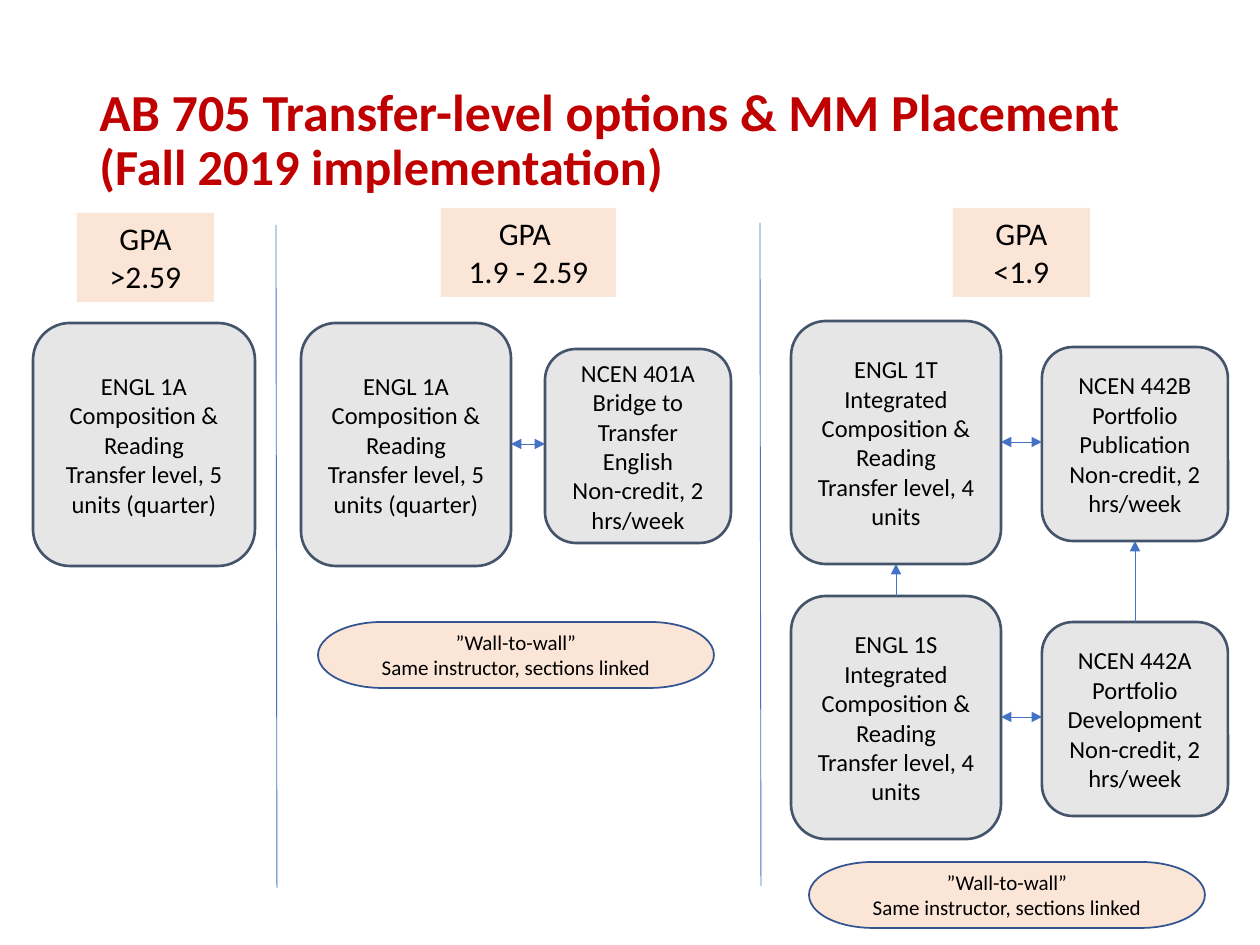
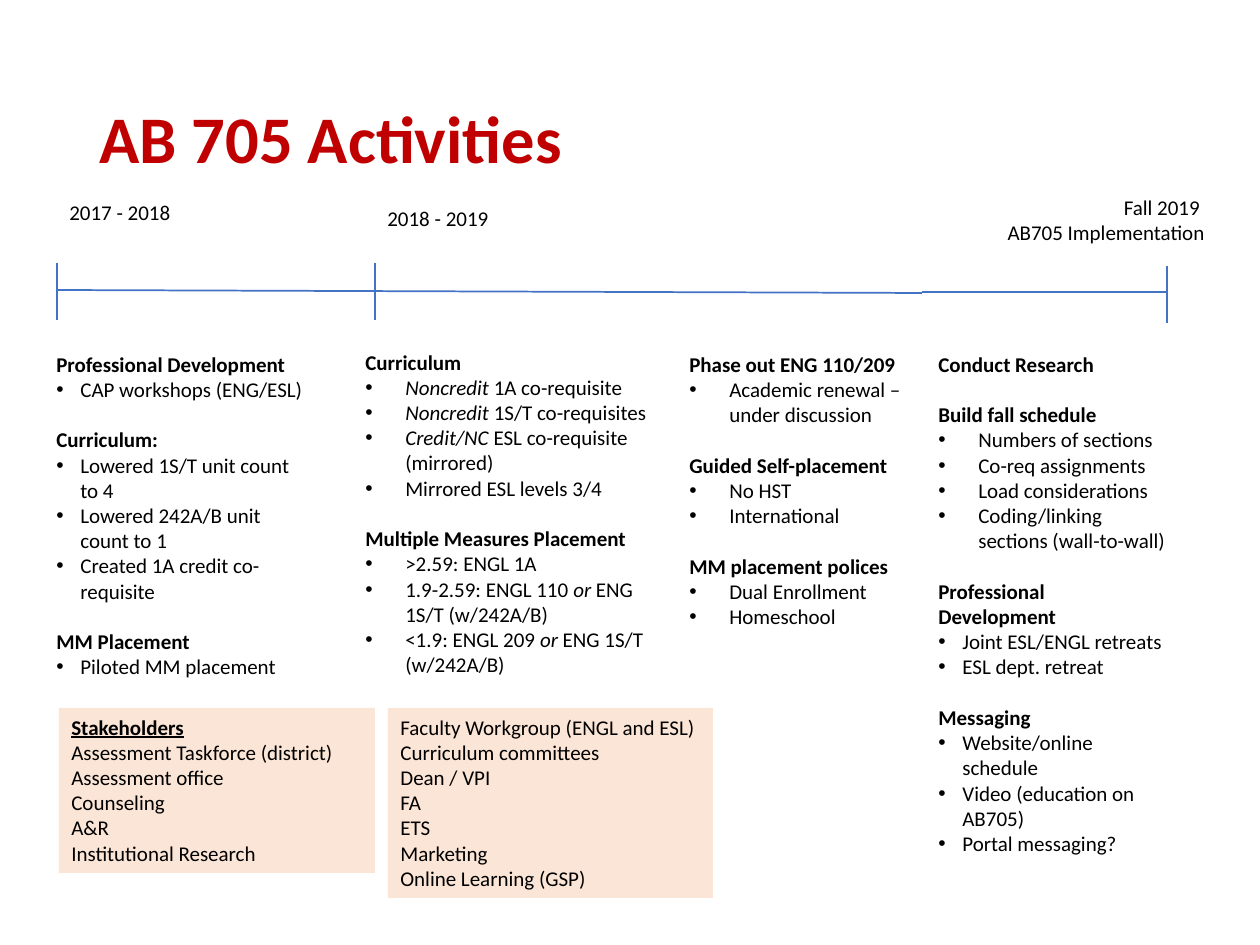
from lxml import etree
from pptx import Presentation
from pptx.dml.color import RGBColor
from pptx.enum.shapes import MSO_CONNECTOR, MSO_SHAPE
from pptx.enum.text import MSO_ANCHOR as Anchor, PP_ALIGN as Align
from pptx.oxml.ns import qn
from pptx.util import Emu, Pt

FONT = "Calibri"
RED = RGBColor(0xC0, 0x00, 0x00)
BLACK = RGBColor(0x00, 0x00, 0x00)
BLUE = RGBColor(0x44, 0x72, 0xC4)
NAVY = RGBColor(0x32, 0x54, 0x91)
SLATE = RGBColor(0x44, 0x54, 0x6A)
GREY = RGBColor(0xE7, 0xE6, 0xE6)
PEACH = RGBColor(0xFB, 0xE5, 0xD6)

EMU_PER_PX = 914400 / 126
TITLE_BOX = (87, 50, 1086, 183)
COURSE_WIDTH, COURSE_HEIGHT = 210, 243
SUPPORT_WIDTH, SUPPORT_HEIGHT = 186, 194
SUPPORT_DROP = 26
TICK_HEIGHT = 57
NARROW, WIDE = 24, 40

ENGL_1A = ["ENGL 1A", "Composition & Reading", "Transfer level, 5 units (quarter)"]
ENGL_1T = ["ENGL 1T", "Integrated Composition & Reading", "Transfer level, 4 units"]
ENGL_1S = ["ENGL 1S", *ENGL_1T[1:]]
NCEN_401A = ["NCEN 401A", "Bridge to Transfer English", "Non-credit, 2 hrs/week"]
NCEN_442A = ["NCEN 442A", "Portfolio Development", "Non-credit, 2 hrs/week"]
NCEN_442B = ["NCEN 442B", "Portfolio Publication", "Non-credit, 2 hrs/week"]

ACTIVITY_COLUMNS = [
    ((44, 345, 280, 369), [
        ("Professional Development", NARROW, ["CAP workshops (ENG/ESL)"]),
        ("Curriculum:", NARROW, [
            "Lowered 1S/T unit count to 4",
            "Lowered 242A/B unit count to 1",
            "Created 1A credit co-requisite"]),
        ("MM Placement", NARROW, ["Piloted MM placement"]),
    ]),
    ((353, 343, 316, 344), [
        ("Curriculum", WIDE, [
            "*Noncredit* 1A co-requisite",
            "*Noncredit* 1S/T co-requisites",
            "*Credit/NC *ESL co-requisite (mirrored)",
            "Mirrored ESL levels 3/4"]),
        ("Multiple Measures Placement", WIDE, [
            ">2.59: ENGL 1A",
            "1.9-2.59: ENGL 110 *or* ENG 1S/T (w/242A/B)",
            "<1.9: ENGL 209 *or* ENG 1S/T (w/242A/B)"]),
    ]),
    ((677, 345, 253, 292), [
        ("Phase out ENG 110/209", WIDE, ["Academic renewal – under discussion"]),
        ("Guided Self-placement", WIDE, ["No HST", "International"]),
        ("MM placement polices", WIDE, ["Dual Enrollment", "Homeschool"]),
    ]),
    ((926, 345, 253, 580), [
        ("Conduct Research", WIDE, []),
        ("Build fall schedule", WIDE, [
            "Numbers of sections",
            "Co-req assignments",
            "Load considerations",
            "Coding/linking sections (wall-to-wall)"]),
        ("Professional Development", NARROW, ["Joint ESL/ENGL retreats", "ESL dept. retreat"]),
        ("Messaging", NARROW, [
            "Website/online schedule",
            "Video (education on AB705)",
            "Portal messaging?"]),
    ]),
]


def px(length):
    """Turn pixels into EMU."""
    return Emu(round(length * EMU_PER_PX))


def style_run(run, size, color=BLACK, bold=False, italic=False):
    """Give a run its font."""
    run.font.name = FONT
    run.font.size = Pt(size)
    run.font.color.rgb = color
    run.font.bold = bold
    run.font.italic = italic


def write_lines(text_frame, lines, size, align=Align.LEFT, anchor=Anchor.TOP):
    """Write one paragraph for each line."""
    text_frame.word_wrap = True
    text_frame.vertical_anchor = anchor
    text_frame.text = "\n".join(lines)
    for paragraph in text_frame.paragraphs:
        paragraph.alignment = align
        for run in paragraph.runs:
            style_run(run, size)


def add_text_box(slide, box):
    """Add an empty text box."""
    return slide.shapes.add_textbox(*map(px, box)).text_frame


def add_panel(slide, kind, box, fill, line=None, width=1):
    """Add a filled shape, outlined if a line colour is given."""
    shape = slide.shapes.add_shape(kind, *map(px, box))
    shape.shadow.inherit = False
    shape.fill.solid()
    shape.fill.fore_color.rgb = fill
    if line is None:
        shape.line.fill.background()
    else:
        shape.line.color.rgb = line
        shape.line.width = Pt(width)
    return shape


def add_line(slide, start, end, width=0.5, arrows=()):
    """Add a straight line with the arrowheads named in arrows."""
    connector = slide.shapes.add_connector(MSO_CONNECTOR.STRAIGHT, *map(px, (*start, *end)))
    connector.line.color.rgb = BLUE
    connector.line.width = Pt(width)
    properties = connector.element.spPr
    for arrow in arrows:
        etree.SubElement(properties.find(qn("a:ln")), qn(f"a:{arrow}"), type="triangle")
    etree.SubElement(properties, qn("a:effectLst"))


def add_title(slide, text, sizes):
    """Add the red title, with one size for each of its lines."""
    text_frame = add_text_box(slide, TITLE_BOX)
    text_frame.word_wrap = True
    text_frame.vertical_anchor = Anchor.MIDDLE
    paragraph = text_frame.paragraphs[0]
    paragraph.text = text
    paragraph.line_spacing = 0.9
    for run, size in zip(paragraph.runs, sizes):
        style_run(run, size, RED, bold=True)


def add_course(slide, box, lines):
    """Add a rounded course box."""
    shape = add_panel(slide, MSO_SHAPE.ROUNDED_RECTANGLE, box, GREY, SLATE, 1.5)
    text_frame = shape.text_frame
    text_frame.margin_top = text_frame.margin_bottom = px(13)
    write_lines(text_frame, lines, 14, Align.CENTER, Anchor.MIDDLE)


def add_course_pair(slide, left, top, gap, course, support):
    """Add a course and its support class, joined by a double arrow."""
    right = left + COURSE_WIDTH
    middle = top + COURSE_HEIGHT // 2
    add_course(slide, (left, top, COURSE_WIDTH, COURSE_HEIGHT), course)
    add_course(slide, (right + gap, top + SUPPORT_DROP, SUPPORT_WIDTH, SUPPORT_HEIGHT), support)
    add_line(slide, (right, middle), (right + gap, middle), arrows=("headEnd", "tailEnd"))


def add_gpa_tag(slide, left, top, width, lines):
    """Add the GPA range that heads a placement."""
    shape = add_panel(slide, MSO_SHAPE.RECTANGLE, (left, top, width, 89), PEACH)
    write_lines(shape.text_frame, lines, 18, Align.CENTER)


def add_linked_note(slide, left, top):
    """Add the note on linked sections."""
    shape = add_panel(slide, MSO_SHAPE.FLOWCHART_TERMINATOR, (left, top, 396, 66), PEACH, NAVY)
    lines = ["”Wall-to-wall”", "Same instructor, sections linked"]
    write_lines(shape.text_frame, lines, 12, Align.CENTER, Anchor.MIDDLE)


def add_two_term_path(slide, left, top, gap):
    """Add two course pairs, the lower leading up to the upper."""
    lower = top + 275
    add_course_pair(slide, left, top, gap, ENGL_1T, NCEN_442B)
    add_course_pair(slide, left, lower, gap, ENGL_1S, NCEN_442A)
    course_center = left + COURSE_WIDTH // 2
    support_center = left + COURSE_WIDTH + gap + SUPPORT_WIDTH // 2
    support_bottom = top + SUPPORT_DROP + SUPPORT_HEIGHT
    add_line(slide, (course_center, lower), (course_center, top + COURSE_HEIGHT),
             arrows=("tailEnd",))
    add_line(slide, (support_center, lower + SUPPORT_DROP), (support_center, support_bottom),
             arrows=("tailEnd",))


def add_activity_column(slide, box, sections):
    """Add headed bullet lists; asterisks enclose italics."""
    text_frame = add_text_box(slide, box)
    text_frame.word_wrap = True
    paragraph = text_frame.paragraphs[0]
    for number, (heading, indent, bullets) in enumerate(sections):
        if number:
            paragraph = text_frame.add_paragraph()
            paragraph.space_before = Pt(14.5)
        paragraph.text = heading
        style_run(paragraph.runs[0], 12, bold=True)
        for bullet in bullets:
            add_bullet(text_frame.add_paragraph(), bullet, indent)


def add_bullet(paragraph, text, indent):
    """Fill a paragraph with a bullet at a hanging indent."""
    properties = paragraph._p.get_or_add_pPr()
    properties.set("marL", str(px(indent)))
    properties.set("indent", str(-px(indent)))
    etree.SubElement(properties, qn("a:buFont"), typeface="Arial")
    etree.SubElement(properties, qn("a:buChar"), char="•")
    for position, piece in enumerate(text.split("*")):
        if piece:
            run = paragraph.add_run()
            run.text = piece
            style_run(run, 12, italic=position % 2 == 1)


def add_timeline(slide, left, top):
    """Add the year axis, its ticks and its dates."""
    axis = top + 27
    add_line(slide, (left, axis), (left + 865, axis + 3), 1)
    add_line(slide, (left + 865, axis + 2), (left + 1110, axis + 2), 1)
    for offset, drop in [(0, 0), (318, 0), (1110, 3)]:
        add_line(slide, (left + offset, top + drop),
                 (left + offset, top + drop + TICK_HEIGHT), 1)
    for offset, rise, lines, align in [
        (0, 70, ["2017 - 2018"], Align.LEFT),
        (318, 64, ["2018 - 2019"], Align.LEFT),
        (936, 75, ["Fall 2019 ", "AB705 Implementation"], Align.RIGHT),
    ]:
        box = (left + offset, top - rise, 224, 13 + 25 * len(lines))
        write_lines(add_text_box(slide, box), lines, 12, align)


def add_stakeholders(slide, left, top):
    """Add the two stakeholder panels."""
    groups = [
        (0, 316, 165, ["Stakeholders", "Assessment Taskforce (district)", "Assessment office",
                       "Counseling", "A&R", "Institutional Research"]),
        (329, 325, 190, ["Faculty Workgroup (ENGL and ESL)", "Curriculum committees",
                         "Dean / VPI", "FA", "ETS", "Marketing", "Online Learning (GSP)"]),
    ]
    panels = []
    for offset, width, height, lines in groups:
        box = (left + offset, top, width, height)
        panels.append(add_panel(slide, MSO_SHAPE.RECTANGLE, box, PEACH))
        write_lines(panels[-1].text_frame, lines, 12)
    heading = panels[0].text_frame.paragraphs[0].runs[0]
    heading.font.bold = heading.font.underline = True


def build_placement_slide(slide):
    """Build the placement options by GPA."""
    add_title(slide, "AB 705 Transfer-level options & MM Placement\v(Fall 2019 implementation)",
              (29.7, 28.8))
    for left, top in [(276, 225), (760, 223)]:
        add_line(slide, (left, top), (left + 1, top + 663))
    add_gpa_tag(slide, 77, 213, 137, ["GPA >2.59"])
    add_gpa_tag(slide, 441, 208, 175, ["GPA ", "1.9 - 2.59"])
    add_gpa_tag(slide, 953, 208, 137, ["GPA <1.9"])
    add_course(slide, (33, 323, 222, COURSE_HEIGHT), ENGL_1A)
    add_course_pair(slide, 301, 323, 34, ENGL_1A, NCEN_401A)
    add_two_term_path(slide, 791, 321, 41)
    add_linked_note(slide, 318, 622)
    add_linked_note(slide, 809, 862)


def build_activities_slide(slide):
    """Build the timeline of activities."""
    add_title(slide, "AB 705 Activities", (38,))
    add_timeline(slide, 57, 263)
    for box, sections in ACTIVITY_COLUMNS:
        add_activity_column(slide, box, sections)
    add_stakeholders(slide, 59, 708)


def main():
    """Build and save the presentation."""
    presentation = Presentation()
    presentation.slide_width, presentation.slide_height = px(1260), px(945)
    for build in (build_placement_slide, build_activities_slide):
        build(presentation.slides.add_slide(presentation.slide_layouts[6]))
    presentation.save("out.pptx")


if __name__ == "__main__":
    main()
